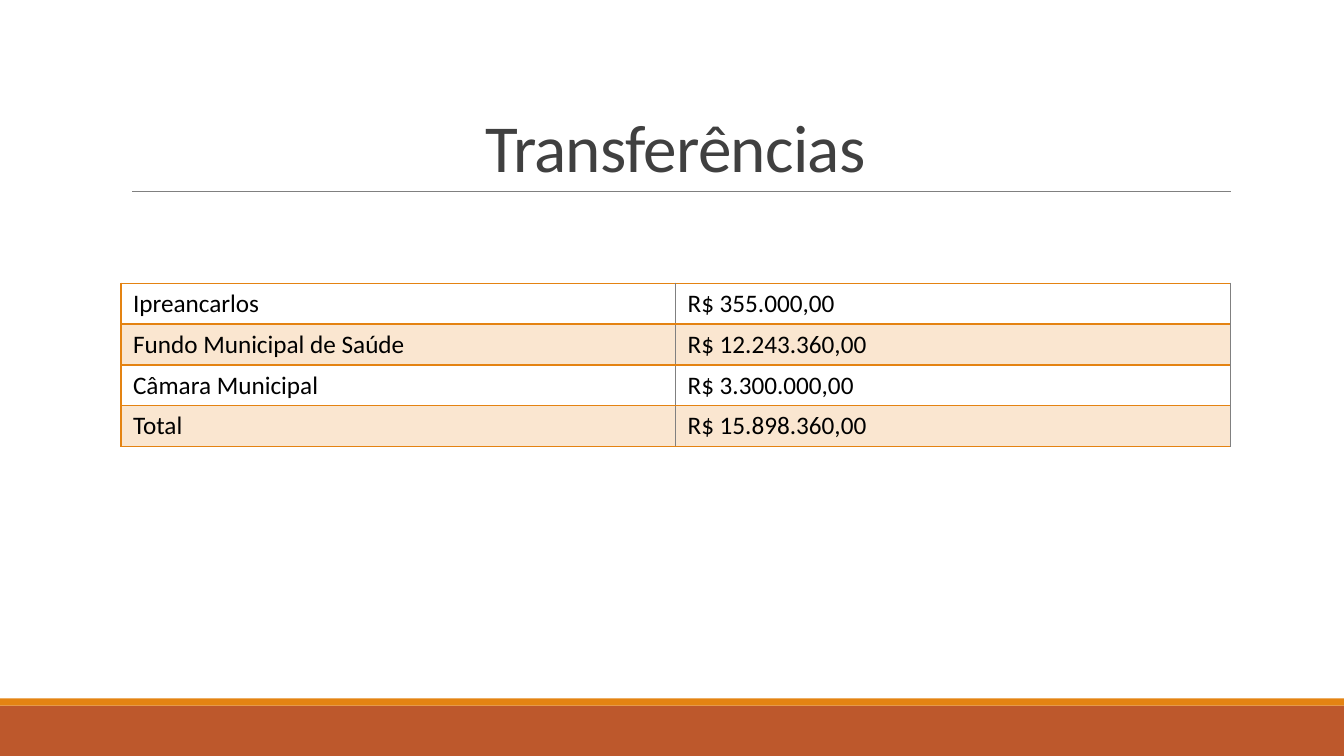
import pptx
import pptx.dml.color
import pptx.enum.shapes
import pptx.enum.text
import pptx.oxml
import pptx.oxml.ns
import pptx.util

Inches = pptx.util.Inches
Pt = pptx.util.Pt

ORANGE = "E48312"
RUST = "BD582C"
GREY = "808080"
PALE_ORANGE = "FAE6D0"

TRANSFERS = [
    ("Ipreancarlos", "R$ 355.000,00"),
    ("Fundo Municipal de Saúde", "R$ 12.243.360,00"),
    ("Câmara Municipal", "R$ 3.300.000,00"),
    ("Total", "R$ 15.898.360,00"),
]


def color(value):
    return pptx.dml.color.RGBColor.from_string(value)


def apply_format(target, values):
    for name, value in values.items():
        setattr(target, name, value)


class SlideBuilder:
    font_name = "Calibri"

    def __init__(self, page):
        self.page = page

    def add_text(self, frame, text, size, text_color, **paragraph_format):
        para = frame.paragraphs[0]
        apply_format(para, paragraph_format)
        span = para.add_run()
        span.text = text
        apply_format(span.font, {"name": self.font_name, "size": Pt(size)})
        span.font.color.rgb = color(text_color)
        return span

    def bar(self, top, height, fill):
        box = self.page.shapes.add_shape(
            pptx.enum.shapes.MSO_SHAPE.RECTANGLE,
            0, Inches(top), Inches(13.33), Inches(height))
        box.shadow.inherit = False
        box.fill.solid()
        box.fill.fore_color.rgb = color(fill)
        box.line.fill.background()

    def rule(self, left, right, top, line_color, width):
        line = self.page.shapes.add_connector(
            pptx.enum.shapes.MSO_CONNECTOR.STRAIGHT,
            Inches(left), Inches(top), Inches(right), Inches(top))
        line.line.color.rgb = color(line_color)
        line.line.width = Pt(width)
        properties = line._element.spPr
        properties.append(pptx.oxml.parse_xml(
            f'<a:effectLst {pptx.oxml.ns.nsdecls("a")}/>'))

    def title(self, text):
        box = self.page.shapes.title
        apply_format(box, {"left": Inches(1.2), "top": Inches(0.31),
                           "width": Inches(11), "height": Inches(1.59)})
        apply_format(box.text_frame, {
            "word_wrap": True,
            "auto_size": pptx.enum.text.MSO_AUTO_SIZE.NONE,
            "vertical_anchor": pptx.enum.text.MSO_ANCHOR.BOTTOM})
        span = self.add_text(box.text_frame, text, 48, "404040", line_spacing=0.85,
                             alignment=pptx.enum.text.PP_ALIGN.CENTER)
        span._r.get_or_add_rPr().set("spc", "-50")

    def border(self, cell, side, line_color, width):
        cell._tc.get_or_add_tcPr().append(pptx.oxml.parse_xml(
            f'<a:{side} {pptx.oxml.ns.nsdecls("a")} w="{Pt(width)}">'
            f'<a:solidFill><a:srgbClr val="{line_color}"/></a:solidFill>'
            f'</a:{side}>'))

    def cell(self, cell, text, row, column):
        apply_format(cell, {"margin_left": Inches(0.12), "margin_right": Inches(0.12),
                            "margin_top": Inches(0.05), "margin_bottom": Inches(0.05)})
        self.add_text(cell.text_frame, text, 18, "000000")
        left = (ORANGE, 1) if column == 0 else (GREY, 0.5)
        sides = {"lnL": left, "lnR": (GREY, 0.5),
                 "lnT": (ORANGE, 2 if row == 1 else 1),
                 "lnB": (ORANGE, 2 if row == 0 else 1)}
        for side, (line_color, width) in sides.items():
            self.border(cell, side, line_color, width)
        if row % 2:
            cell.fill.solid()
            cell.fill.fore_color.rgb = color(PALE_ORANGE)
        else:
            cell.fill.background()

    def table(self, records, left, top, column_width, row_height):
        columns = len(records[0])
        table = self.page.shapes.add_table(
            len(records), columns, Inches(left), Inches(top),
            Inches(column_width * columns), Inches(row_height * len(records))).table
        apply_format(table, {"first_row": False, "horz_banding": False})
        for row, record in enumerate(records):
            for column, text in enumerate(record):
                self.cell(table.cell(row, column), text, row, column)


def main():
    deck = pptx.Presentation()
    apply_format(deck, {"slide_width": Inches(13.33), "slide_height": Inches(7.5)})
    builder = SlideBuilder(deck.slides.add_slide(deck.slide_layouts[5]))
    builder.bar(7, 0.5, RUST)
    builder.bar(6.93, 0.07, ORANGE)
    builder.rule(1.31, 12.21, 1.9, GREY, 0.5)
    builder.title("Transferências")
    builder.table(TRANSFERS, 1.2, 2.81, 5.5, 0.405)
    deck.save("out.pptx")


if __name__ == "__main__":
    main()
